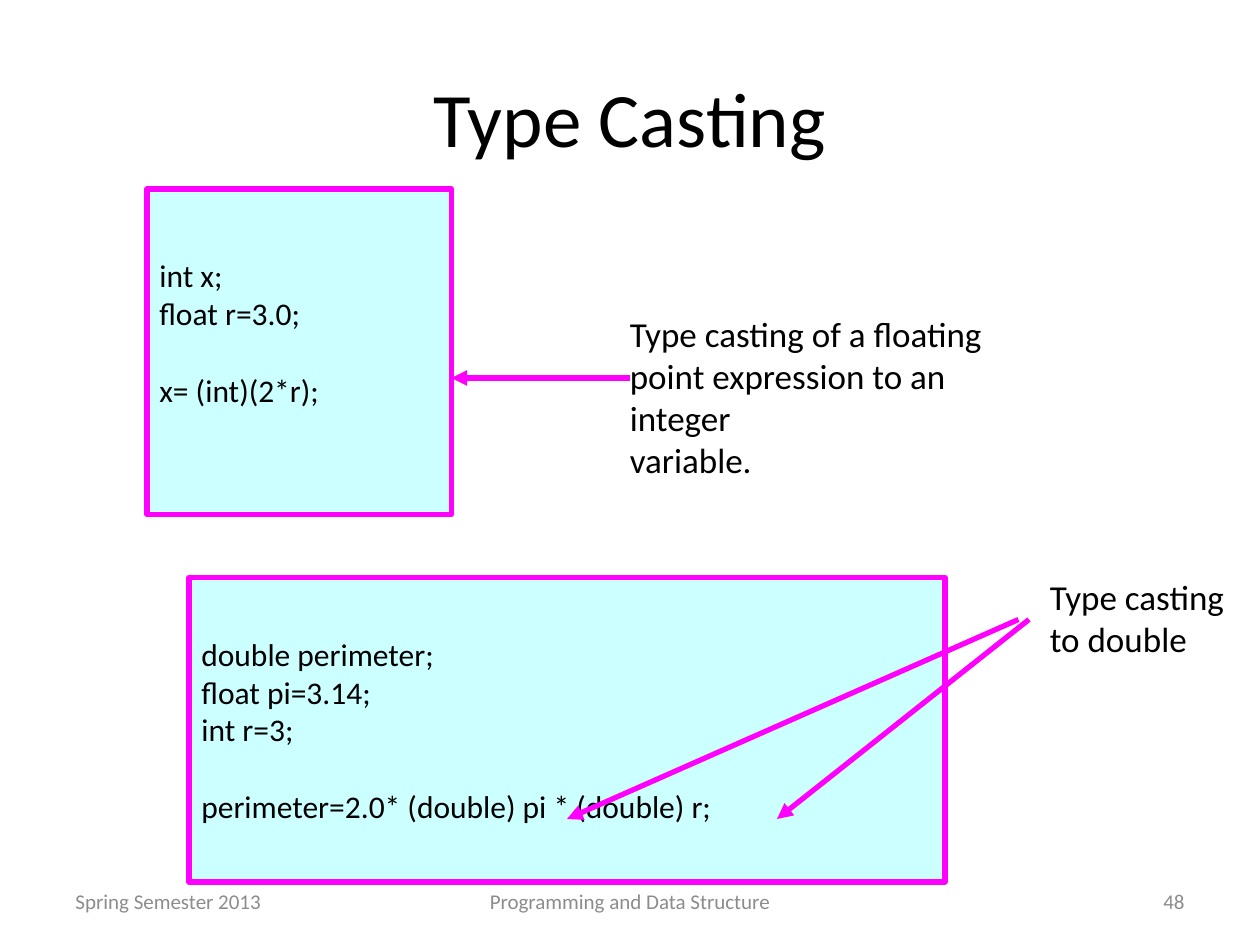
from pptx import Presentation
from pptx.dml.color import RGBColor
from pptx.enum.shapes import MSO_CONNECTOR as Link, MSO_SHAPE as Shape
from pptx.enum.text import MSO_ANCHOR as Anchor, PP_ALIGN as Align
from pptx.oxml.ns import qn
from pptx.util import Inches, Pt
from lxml.etree import SubElement

BLACK = RGBColor(0x00, 0x00, 0x00)
GRAY = RGBColor(0x8C, 0x8C, 0x8C)
CYAN = RGBColor(0xCC, 0xFF, 0xFF)
PINK = RGBColor(0xFF, 0x00, 0xFF)
FONT = "Calibri"
GAP = Pt(22)  # one line of code

# Grid of 120 columns and 90 rows
deck = Presentation()
deck.slide_width, deck.slide_height = Inches(10), Inches(7.5)
CELL = deck.slide_width // 120
slide = deck.slides.add_slide(deck.slide_layouts[5])
shapes = slide.shapes


def grid(*cells):
    return [round(n * CELL) for n in cells]


def write(frame, lines, size, color=BLACK, align=Align.LEFT, anchor=Anchor.MIDDLE):
    frame.word_wrap = True
    frame.vertical_anchor = anchor
    frame.text = "\n".join(lines)
    for para in frame.paragraphs:
        para.alignment = align
        para.font.name, para.font.size = FONT, Pt(size)
        para.font.color.rgb = color


# Title
title = shapes.title
title.left, title.top, title.width, title.height = grid(6, 3.6, 108, 15)
write(title.text_frame, ["Type Casting"], 44, align=Align.CENTER)

# Footer
for col, wide, text, align in [
    (6, 28, "Spring Semester 2013", Align.LEFT),
    (41, 38, "Programming and Data Structure", Align.CENTER),
    (86, 28, "48", Align.RIGHT),
]:
    foot = shapes.add_textbox(*grid(col, 83.4, wide, 4.8))
    write(foot.text_frame, [text], 12, GRAY, align)

# Code boxes, with a gap above the last line
for area, lines, below in [
    ((14, 18, 29, 31), ["int x;", "float r=3.0;", "x= (int)(2*r);"], GAP),
    ((18, 55, 72, 29), ["double perimeter;", "float pi=3.14;", "int r=3;",
                        "perimeter=2.0* (double) pi * (double) r;"], 0),
]:
    box = shapes.add_shape(Shape.RECTANGLE, *grid(*area))
    box.shadow.inherit = False
    box.fill.solid()
    box.fill.fore_color.rgb = CYAN
    box.line.color.rgb, box.line.width = PINK, Pt(3)
    frame = box.text_frame
    write(frame, lines, 18)
    frame.paragraphs[-1].space_before = GAP
    frame.margin_bottom += below

# Labels
for area, lines in [
    ((58.8, 29.2, 41.8, 13.2), ["Type casting of a floating",
                                "point expression to an integer", "variable."]),
    ((98.8, 54.2, 19.6, 9.2), ["Type casting", "to double"]),
]:
    label = shapes.add_textbox(*grid(*area))
    write(label.text_frame, lines, 20, anchor=Anchor.TOP)

# Arrows from labels to casts
for ends in [(60, 36, 43, 36), (98, 59, 74, 78), (97, 59, 54, 78)]:
    arrow = shapes.add_connector(Link.STRAIGHT, *grid(*ends))
    arrow.line.color.rgb, arrow.line.width = PINK, Pt(3)
    SubElement(arrow.line._get_or_add_ln(), qn("a:tailEnd"), type="triangle")
    SubElement(arrow._element.spPr, qn("a:effectLst"))

deck.save("out.pptx")
